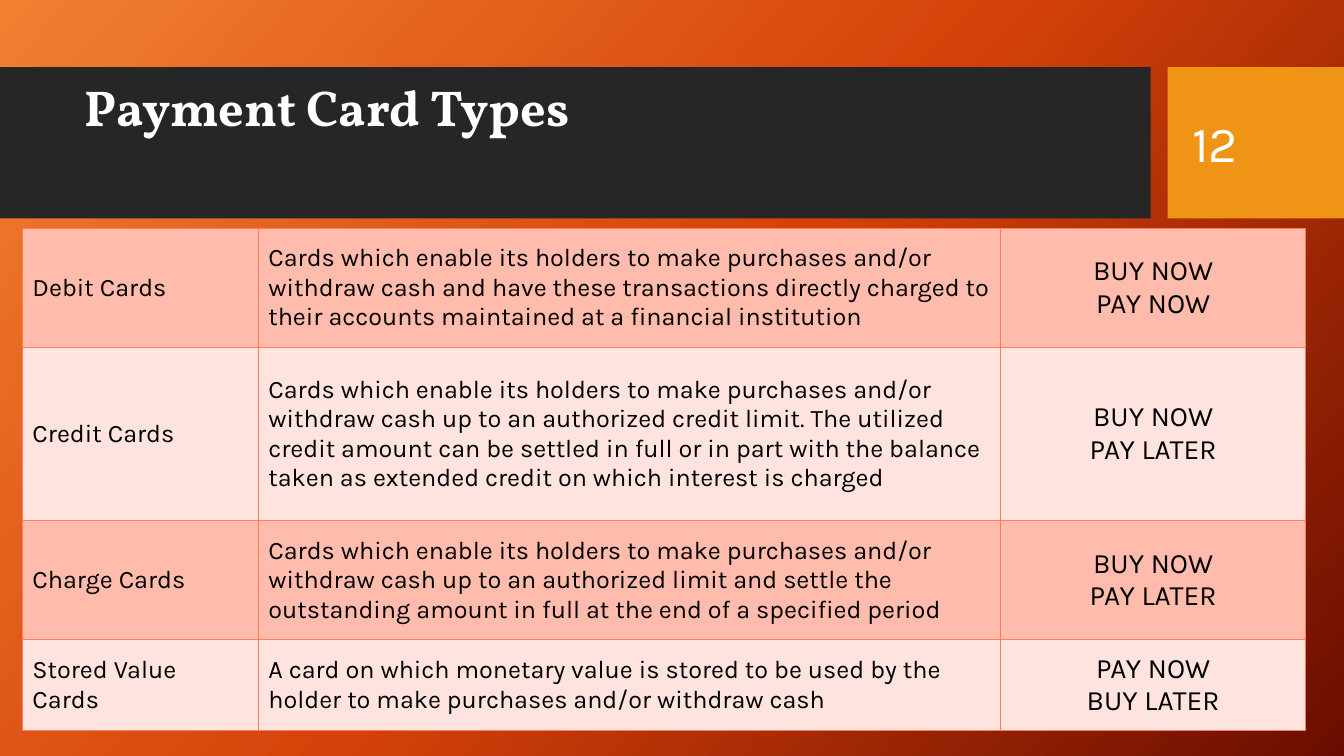
from copy import deepcopy
from lxml import etree
from pptx import Presentation
from pptx.dml.color import RGBColor
from pptx.enum.shapes import MSO_SHAPE
from pptx.enum.text import MSO_ANCHOR, PP_ALIGN
from pptx.oxml.ns import qn
from pptx.util import Pt

RECT = MSO_SHAPE.RECTANGLE
TOP, MIDDLE = MSO_ANCHOR.TOP, MSO_ANCHOR.MIDDLE
LEFT, CENTER = PP_ALIGN.LEFT, PP_ALIGN.CENTER


def color(text):
    return RGBColor.from_string(text)


def write(frame, text, align, ink, form):
    frame.text = text
    for para in frame.paragraphs:
        para.alignment = align
        para.font.color.rgb = color(ink)
        for key, value in form.items():
            setattr(para.font, key, value)


deck = Presentation()
deck.slide_width, deck.slide_height = Pt(960), Pt(540)
slide = deck.slides.add_slide(deck.slide_layouts[6])

back = slide.background.fill
back.gradient()
back.gradient_angle = 318
stops = slide.element.find(".//" + qn("a:gsLst"))
stops.append(deepcopy(stops[0]))
tones = [(0, "F18031"), (0.5, "D54209"), (1, "6A0D00")]
for stop, (place, tone) in zip(back.gradient_stops, tones):
    stop.position = place
    stop.color.rgb = color(tone)

for left, width, tone in [(0, 822, "262626"), (834, 126, "F09415")]:
    bar = slide.shapes.add_shape(RECT, Pt(left), Pt(48), Pt(width), Pt(108))
    bar.shadow.inherit = False
    bar.fill.solid()
    bar.fill.fore_color.rgb = color(tone)
    bar.line.fill.background()

cards = [
    ("Debit Cards",
     "Cards which enable its holders to make purchases and/or withdraw cash "
     "and have these transactions directly charged to their accounts "
     "maintained at a financial institution",
     "BUY NOW\nPAY NOW"),
    ("Credit Cards",
     "Cards which enable its holders to make purchases and/or withdraw cash "
     "up to an authorized credit limit. The utilized credit amount can be "
     "settled in full or in part with the balance taken as extended credit "
     "on which interest is charged",
     "BUY NOW\nPAY LATER"),
    ("Charge Cards",
     "Cards which enable its holders to make purchases and/or withdraw cash "
     "up to an authorized limit and settle the outstanding amount in full "
     "at the end of a specified period",
     "BUY NOW\nPAY LATER"),
    ("Stored Value Cards",
     "A card on which monetary value is stored to be used by the holder "
     "to make purchases and/or withdraw cash",
     "PAY NOW\nBUY LATER"),
]
widths = [168.5, 530.5, 217.5]
heights = [85, 124, 85, 65]
bands = ["FFBBAB", "FFE3DE"]
styles = [(LEFT, 18), (LEFT, 18), (CENTER, 20)]

table = slide.shapes.add_table(
    len(cards), len(widths), Pt(16), Pt(163),
    Pt(sum(widths)), Pt(sum(heights))).table
table.first_row = table.horz_banding = False
for column, width in zip(table.columns, widths):
    column.width = Pt(width)
for r, (row, height) in enumerate(zip(table.rows, heights)):
    row.height = Pt(height)
    for cell, text, (align, size) in zip(row.cells, cards[r], styles):
        cell.vertical_anchor = MIDDLE
        write(cell.text_frame, text, align, "000000",
              {"name": "Karla", "size": Pt(size)})
        props = cell._tc.get_or_add_tcPr()
        for side in ("lnL", "lnR", "lnT", "lnB"):
            edge = etree.SubElement(props, qn("a:" + side), w=str(Pt(0.75)))
            paint = etree.SubElement(edge, qn("a:solidFill"))
            etree.SubElement(paint, qn("a:srgbClr"), val="FA7E5C")
        cell.fill.solid()
        cell.fill.fore_color.rgb = color(bands[r % 2])

labels = [
    ("Payment Card Types", 53, 757, TOP,
     {"name": "Vollkorn", "size": Pt(36), "bold": True}),
    ("12", 844.5, 115, MIDDLE, {"name": "Karla", "size": Pt(36)}),
]
for text, left, width, anchor, form in labels:
    box = slide.shapes.add_textbox(Pt(left), Pt(59), Pt(width), Pt(85))
    frame = box.text_frame
    frame.word_wrap = True
    frame.vertical_anchor = anchor
    frame.margin_top = frame.margin_bottom = 0
    write(frame, text, LEFT, "FFFFFF", form)
    frame.paragraphs[0].line_spacing = 0.9 if anchor == TOP else 1.0

deck.save("out.pptx")
